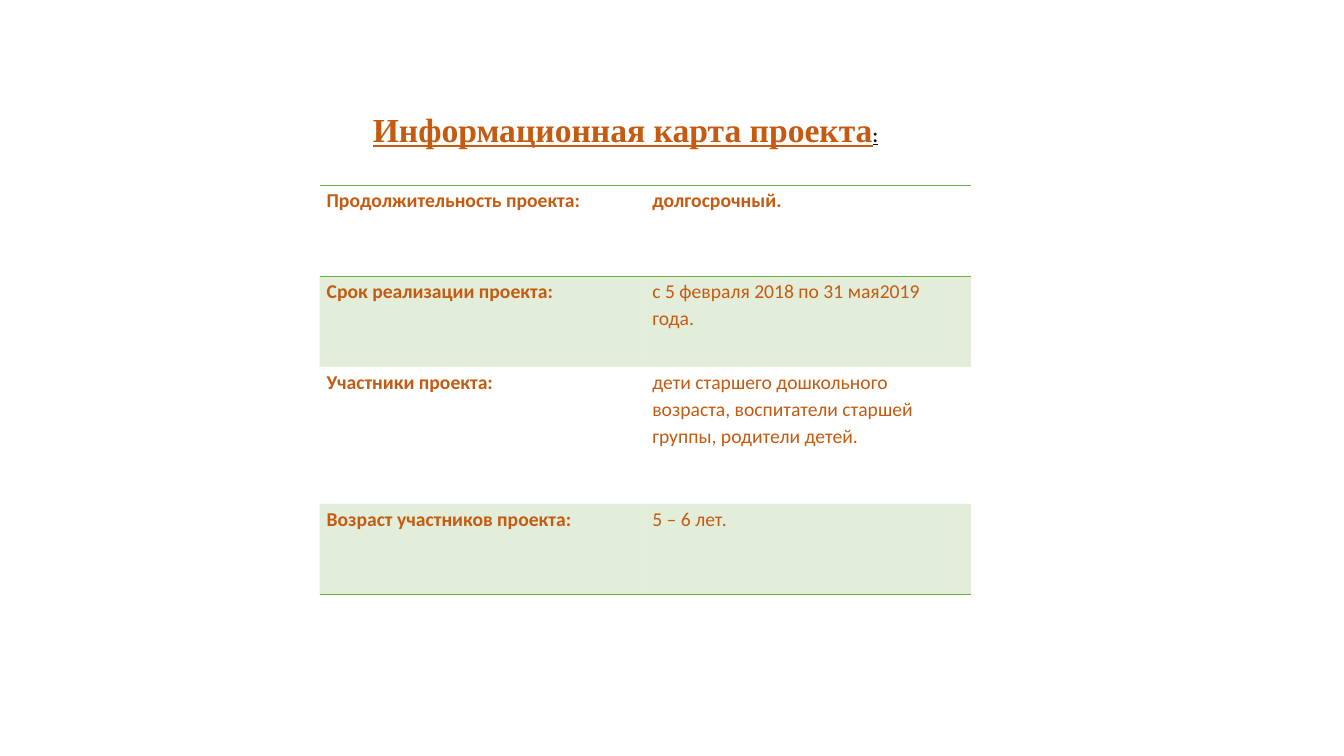
from dataclasses import dataclass

from lxml.etree import SubElement
from pptx import Presentation
from pptx.dml.color import RGBColor as Color
from pptx.enum.text import MSO_ANCHOR as Anchor
from pptx.oxml.ns import qn
from pptx.util import Inches, Pt


@dataclass(frozen=True)
class Theme:
    """Colours, fonts and type sizes of the slide."""
    accent: str = "C55A11"
    dark: str = "111111"
    green: str = "70AD47"
    band_alpha: int = 20
    heading_font: str = "Times New Roman"
    body_font: str = "Calibri"
    heading_size: int = 24
    body_size: int = 14
    rule_width: float = 1
    plain_table: str = "{2D5ABB26-0587-4C30-8999-92F81FD0307C}"


THEME = Theme()
TITLE_BOX = (3.35, 1.03, 5.53, 0.81)
TABLE_ORIGIN = (3.17, 1.84)
COLUMN_WIDTH = 3.23
ROW_HEIGHT = 0.9
PROJECT_CARD = [
    ("Продолжительность\u00a0проекта:", "долгосрочный.", 1),
    ("Срок реализации\u00a0проекта:", "с 5 февраля 2018 по 31 мая2019 года.", 1),
    ("Участники\u00a0проекта:",
     "дети старшего дошкольного возраста, воспитатели старшей группы, родители детей.", 1.51),
    ("Возраст участников\u00a0проекта:", "5 – 6 лет.", 1),
]


def add_run(paragraph, text, font, size, color, bold=True, underline=False):
    """Append a styled run to a paragraph."""
    run = paragraph.add_run()
    run.text = text
    run.font.name = font
    run.font.size = Pt(size)
    run.font.bold = bold
    run.font.underline = underline
    run.font.color.rgb = Color.from_string(color)


def add_title(slide):
    """Add the underlined heading with its small colon."""
    frame = slide.shapes.add_textbox(*map(Inches, TITLE_BOX)).text_frame
    frame.word_wrap = True
    frame.vertical_anchor = Anchor.TOP
    paragraph = frame.paragraphs[0]
    paragraph._p.get_or_add_pPr().set("indent", str(Inches(0.25)))
    add_run(paragraph, "Информационная карта проекта", THEME.heading_font,
            THEME.heading_size, THEME.accent, underline=True)
    add_run(paragraph, ":", THEME.body_font, THEME.body_size, THEME.dark, underline=True)


def add_border(cell, side):
    """Draw a green rule on one side of a cell."""
    line = SubElement(cell._tc.get_or_add_tcPr(), qn(f"a:{side}"),
                      w=str(Pt(THEME.rule_width)))
    SubElement(SubElement(line, qn("a:solidFill")), qn("a:srgbClr"), val=THEME.green)


def fill_cell(cell, banded):
    """Give a cell the translucent band or no fill."""
    if not banded:
        cell.fill.background()
        return
    cell.fill.solid()
    cell.fill.fore_color.rgb = Color.from_string(THEME.green)
    color = cell._tc.tcPr.find(qn("a:solidFill")).find(qn("a:srgbClr"))
    SubElement(color, qn("a:alpha"), val=str(THEME.band_alpha * 1000))


def write_cell(cell, text, bold):
    """Set the margins and the text of a cell."""
    cell.margin_left = cell.margin_right = Inches(0.07)
    cell.margin_top = cell.margin_bottom = 0
    paragraph = cell.text_frame.paragraphs[0]
    paragraph.line_spacing = 1.15
    add_run(paragraph, text, THEME.body_font, THEME.body_size, THEME.accent, bold)


def add_project_table(slide):
    """Add the two-column project card."""
    height = ROW_HEIGHT * sum(share for *_, share in PROJECT_CARD)
    frame = slide.shapes.add_table(len(PROJECT_CARD), 2, *map(Inches, TABLE_ORIGIN),
                                   Inches(2 * COLUMN_WIDTH), Inches(height))
    table = frame.table
    table.first_row = table.horz_banding = False
    table._tbl.tblPr.find(qn("a:tableStyleId")).text = THEME.plain_table
    last = len(PROJECT_CARD) - 1
    for index, (label, value, share) in enumerate(PROJECT_CARD):
        table.rows[index].height = Inches(ROW_HEIGHT * share)
        for column, text in enumerate((label, value)):
            cell = table.cell(index, column)
            write_cell(cell, text, bold=column == 0 or index == 0)
            if index == 0:
                add_border(cell, "lnT")
            if index in (0, last):
                add_border(cell, "lnB")
            fill_cell(cell, banded=index % 2 == 1)


def main():
    """Build and save the slide."""
    presentation = Presentation()
    presentation.slide_width = Inches(13.33)
    presentation.slide_height = Inches(7.5)
    slide = presentation.slides.add_slide(presentation.slide_layouts[6])
    add_project_table(slide)
    add_title(slide)
    presentation.save("out.pptx")


if __name__ == "__main__":
    main()
